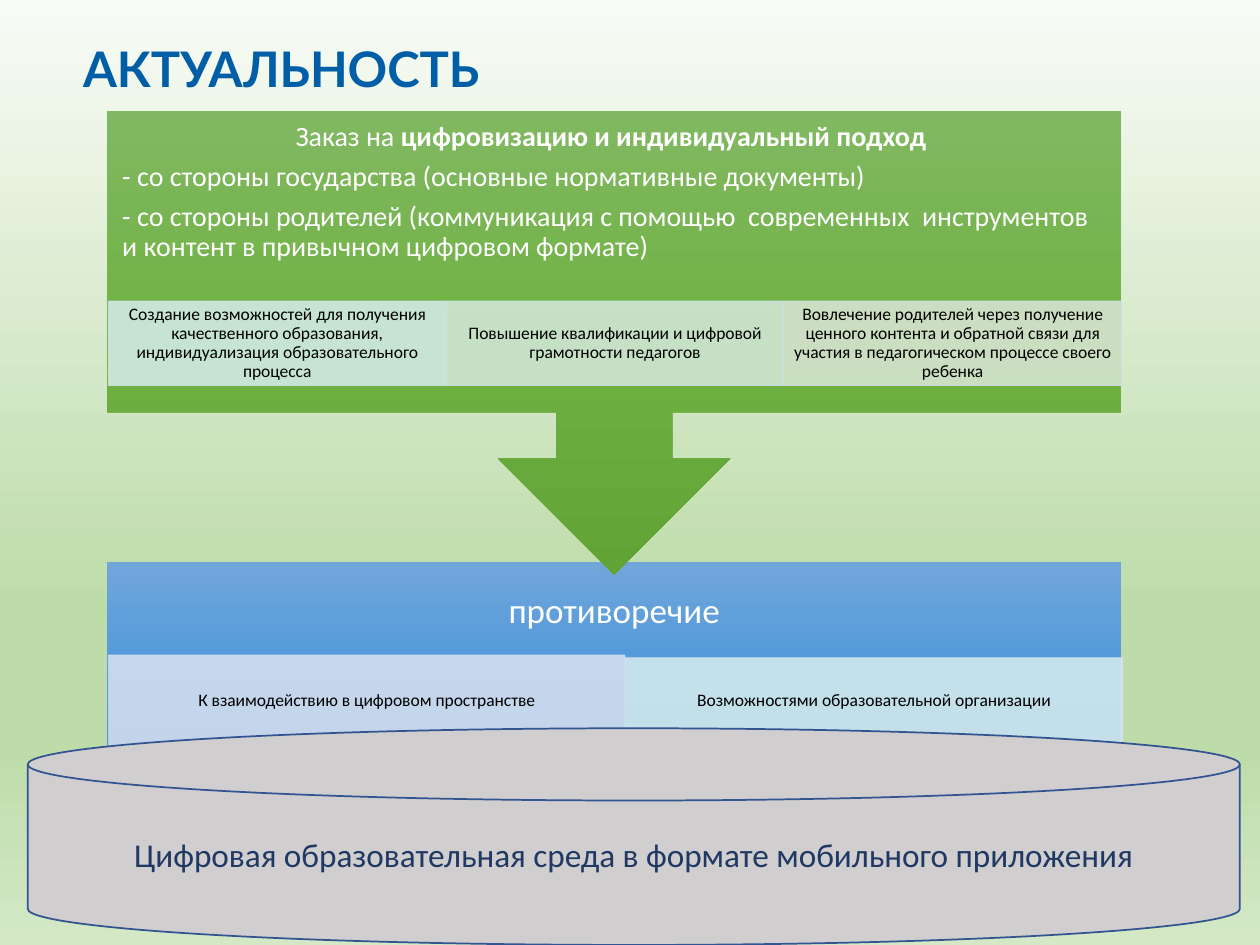
from lxml import etree
from pptx import Presentation
from pptx import util as u
from pptx.dml.color import RGBColor
from pptx.enum import shapes, text
from pptx.oxml.ns import qn

LEFT, WIDTH = 0.85, 8.05
CENTER, START = text.PP_ALIGN.CENTER, text.PP_ALIGN.LEFT
KIND = shapes.MSO_SHAPE


def rgb(value):
    return RGBColor.from_string(value)


def gradient(fill, owner, stops):
    fill.gradient()
    fill.gradient_angle = 270
    stop_list = next(owner.iter(qn("a:gsLst")))
    for old in list(stop_list):
        stop_list.remove(old)
    for position, color in stops:
        stop = etree.SubElement(stop_list, qn("a:gs"), pos=str(position * 1000))
        etree.SubElement(stop, qn("a:srgbClr"), val=color)


def write(frame, paragraphs, size, color, font="Calibri", insets=(0.1, 0.05),
          anchor=text.MSO_ANCHOR.MIDDLE, spacing=0.9, after=0.35):
    frame.word_wrap = True
    frame.vertical_anchor = anchor
    frame.margin_left = frame.margin_right = u.Inches(insets[0])
    frame.margin_top = frame.margin_bottom = u.Inches(insets[1])
    for index, (alignment, runs) in enumerate(paragraphs):
        paragraph = frame.add_paragraph() if index else frame.paragraphs[0]
        paragraph.alignment = alignment
        paragraph.line_spacing = spacing
        paragraph.space_after = u.Pt(round(size * after, 1))
        for words, bold in runs:
            run = paragraph.add_run()
            run.text = words
            run.font.name = font
            run.font.size = u.Pt(size)
            run.font.bold = bold
            run.font.color.rgb = rgb(color)


def add_block(slide, kind, box):
    block = slide.shapes.add_shape(kind, *map(u.Inches, box))
    block.shadow.inherit = False
    block.line.fill.background()
    return block


def add_panel(slide, kind, box, stops):
    panel = add_block(slide, kind, box)
    gradient(panel.fill, panel.element, stops)


def add_label(slide, box, paragraphs, size, color, **style):
    label = slide.shapes.add_textbox(*map(u.Inches, box))
    write(label.text_frame, paragraphs, size, color, **style)


def add_cell(slide, box, color, words):
    cell = add_block(slide, KIND.RECTANGLE, box)
    cell.fill.solid()
    cell.fill.fore_color.rgb = rgb(color)
    cell.line.color.rgb = rgb("D2DEEF")
    cell.line.width = u.Pt(0.5)
    for color_node in cell.element.spPr.iter(qn("a:srgbClr")):
        etree.SubElement(color_node, qn("a:alpha"), val="90000")
    write(cell.text_frame, [(CENTER, [(words, False)])], 10, "000000",
          insets=(0.08, 0.01))


def add_platform(slide, box, words):
    platform = add_block(slide, KIND.FLOWCHART_MAGNETIC_DISK, box)
    platform.fill.solid()
    platform.fill.fore_color.rgb = rgb("D0CECE")
    platform.line.color.rgb = rgb("325491")
    platform.line.width = u.Pt(1)
    write(platform.text_frame, [(CENTER, [(words, False)])], 19, "203864",
          spacing=1.0, after=0)


def add_contradiction(slide):
    add_panel(slide, KIND.RECTANGLE, (LEFT, 4.46, WIDTH, 1.48),
              [(0, "71A6DB"), (50, "559BDB"), (100, "448ACA")])
    add_label(slide, (LEFT, 4.46, WIDTH, 0.8),
              [(CENTER, [("противоречие", False)])], 20, "FFFFFF",
              insets=(0.16, 0.16))
    add_cell(slide, (0.86, 5.2, 4.1, 0.73), "D2DEEF",
             "К взаимодействию в цифровом пространстве")
    add_cell(slide, (4.96, 5.22, 3.95, 0.69), "D1E9ED",
             "Возможностями образовательной организации")


def add_demand(slide):
    add_panel(slide, KIND.DOWN_ARROW_CALLOUT, (LEFT, 0.88, WIDTH, 3.68),
              [(0, "81B861"), (50, "6FB242"), (100, "62A336")])
    demand = [
        (CENTER, [("Заказ на ", False),
                  ("цифровизацию и индивидуальный подход ", True)]),
        (START, [("- со стороны государства (основные нормативные документы)",
                  False)]),
        (START, [("- со стороны родителей (коммуникация с помощью  современных  "
                  "инструментов и контент в привычном цифровом формате)", False)]),
    ]
    add_label(slide, (LEFT, 0.88, WIDTH, 1.29), demand, 16, "FFFFFF",
              insets=(0.12, 0.12))
    tasks = [
        ("D0EAE1", "Создание возможностей для получения качественного образования, "
                   "индивидуализация образовательного процесса"),
        ("D0E6D4", "Повышение квалификации и цифровой грамотности педагогов"),
        ("D5E3CF", "Вовлечение родителей через получение ценного контента и обратной "
                   "связи для участия в педагогическом процессе своего ребенка"),
    ]
    task_width = 2.68
    for column, (color, words) in enumerate(tasks):
        add_cell(slide, (0.86 + column * task_width, 2.39, task_width, 0.67),
                 color, words)


def main():
    deck = Presentation()
    deck.slide_width, deck.slide_height = u.Inches(10), u.Inches(7.5)
    slide = deck.slides.add_slide(deck.slide_layouts[6])
    gradient(slide.background.fill, slide.element,
             [(0, "F8FBF6"), (64, "BEDCAA"), (79, "BEDCAA"), (100, "D4E8C6")])
    add_contradiction(slide)
    add_demand(slide)
    add_label(slide, (0.66, 0.28, 8.62, 0.71),
              [(START, [("АКТУАЛЬНОСТЬ", True)])], 28, "005EA6", font="Lato",
              insets=(0, 0.05), anchor=text.MSO_ANCHOR.TOP, spacing=u.Pt(32), after=0)
    add_platform(slide, (0.22, 5.78, 9.62, 1.72),
                 "Цифровая образовательная среда в формате мобильного приложения")
    deck.save("out.pptx")


if __name__ == "__main__":
    main()
